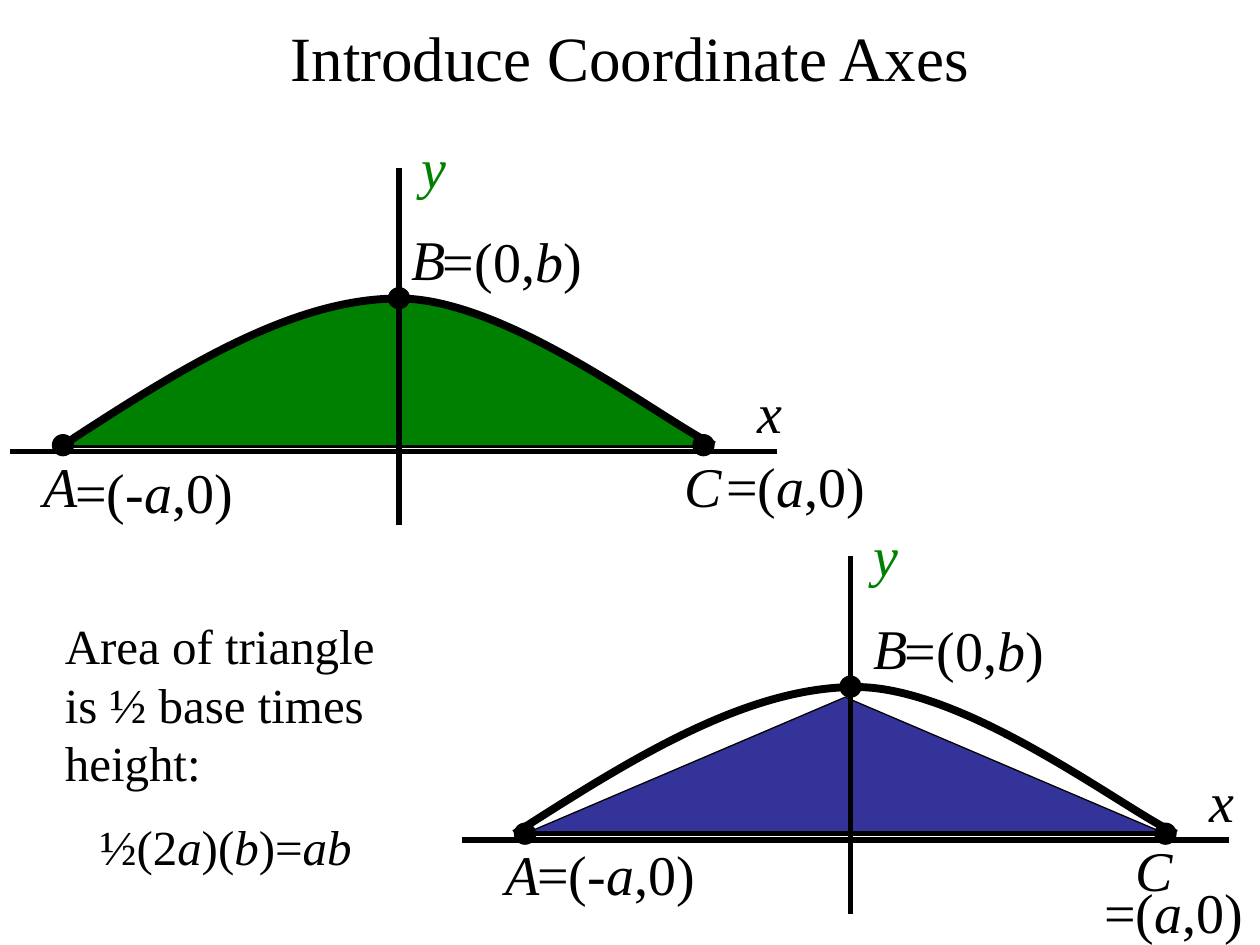
from lxml import etree
from pptx import Presentation
from pptx.dml.color import RGBColor
from pptx.enum.shapes import MSO_CONNECTOR, MSO_SHAPE
from pptx.enum.text import MSO_ANCHOR, MSO_AUTO_SIZE, PP_ALIGN
from pptx.oxml.ns import qn
from pptx.util import Pt

BLACK = RGBColor(0x00, 0x00, 0x00)
GREEN = RGBColor(0x00, 0x80, 0x00)
BLUE = RGBColor(0x33, 0x33, 0x99)
FONT = "Times New Roman"
LEFT, CENTER = PP_ALIGN.LEFT, PP_ALIGN.CENTER
TOP = MSO_ANCHOR.TOP
NO_AUTOFIT = MSO_AUTO_SIZE.NONE
STRAIGHT = MSO_CONNECTOR.STRAIGHT
TRIANGLE, OVAL = MSO_SHAPE.ISOSCELES_TRIANGLE, MSO_SHAPE.OVAL

# Start, then two cubic segments of three points each, from the left end
ARCH = [(0, 158.4), (65, 116), (130, 74.6), (192, 74.6),
        (254, 74.6), (342, 144), (372, 158.4)]
ARCH_WIDTH = 372


def write(p, text, size=32, color=BLACK, align=LEFT, before=0):
    """Fill a paragraph; the parts between asterisks are italic."""
    p.alignment = align
    p.space_before = Pt(before)
    for i, part in enumerate(text.split("*")):
        if part:
            r = p.add_run()
            r.text = part
            r.font.name, r.font.size = FONT, Pt(size)
            r.font.italic = i % 2 == 1
            r.font.bold = False
            r.font.color.rgb = color


def set_frame(tf):
    tf.word_wrap = True
    tf.auto_size = NO_AUTOFIT
    tf.vertical_anchor = TOP
    tf.margin_left = tf.margin_right = Pt(7.2)
    tf.margin_top, tf.margin_bottom = Pt(3.6), Pt(0)


def add_text(slide, x, y, w, h, text, **fmt):
    tf = slide.shapes.add_textbox(Pt(x), Pt(y), Pt(w), Pt(h)).text_frame
    set_frame(tf)
    write(tf.paragraphs[0], text, **fmt)
    return tf


def style(sp, fill, width):
    sp.shadow.inherit = False
    if fill is None:
        sp.fill.background()
    else:
        sp.fill.solid()
        sp.fill.fore_color.rgb = fill
    sp.line.color.rgb = BLACK
    sp.line.width = Pt(width)


def add_shape(slide, kind, x, y, w, h, fill):
    sp = slide.shapes.add_shape(kind, Pt(x), Pt(y), Pt(w), Pt(h))
    style(sp, fill, 0.75)


def add_line(slide, x1, y1, x2, y2):
    line = slide.shapes.add_connector(STRAIGHT, Pt(x1), Pt(y1), Pt(x2), Pt(y2))
    line.line.color.rgb = BLACK
    line.line.width = Pt(3)
    etree.SubElement(line._element.spPr, qn("a:effectLst"))


def add_arch(slide, x, y, w, fill):
    points = [(Pt(x + dx * w / ARCH_WIDTH), Pt(y + dy)) for dx, dy in ARCH]
    builder = slide.shapes.build_freeform(*points[0])
    builder.add_line_segments(points[1:], close=False)
    sp = builder.convert_to_shape()
    style(sp, fill, 4.5)
    # Turn each three straight segments into one cubic curve
    segments = list(sp._element.iter(qn("a:lnTo")))
    for i in range(0, len(segments), 3):
        curve = etree.Element(qn("a:cubicBezTo"))
        segments[i].addprevious(curve)
        for segment in segments[i:i + 3]:
            curve.append(segment[0])
            segment.getparent().remove(segment)


def add_graph(slide, x, y, shift, c_y, a_value_y, c_value, arch_fill=None,
              triangle_fill=None):
    """Draw axes, arch and labels; shift moves the base and its points."""
    bx, base_y = x + shift, y + 158.4
    base = (bx + 30, base_y, bx + 402, base_y)

    # Arch, triangle and base line
    if arch_fill is not None:
        add_line(slide, *base)
    add_arch(slide, x + 30, y, ARCH_WIDTH + shift, arch_fill)
    if triangle_fill is not None:
        add_shape(slide, TRIANGLE, bx + 30, y + 80.4, 366, 78, triangle_fill)
        add_line(slide, *base)

    # Points B, A, C
    for cx, cy in ((x + 222, y + 74.4), (bx + 30, base_y), (bx + 396, base_y)):
        add_shape(slide, OVAL, cx - 6, cy - 6, 12, 12, BLACK)

    # Axes
    add_line(slide, x + 222, y, x + 222, y + 204)
    add_line(slide, x, y + 162, x + 438, y + 162)

    # Labels
    labels = [
        (bx + 12, y + 158.4, 72, "*A*", BLACK),
        (bx + 222, y + 28.8, 72, "*B*", BLACK),
        (x + 378, y + c_y, 72, "*C*", BLACK),
        (x + 420, y + 116.4, 36, "*x*", BLACK),
        (x + 228, y - 24, 102, "*y*", GREEN),
        (bx + 240, y + 30, 126, "=(0,*b*)", BLACK),
        (bx + 30, y + a_value_y, 144, "=(-*a*,0)", BLACK),
        (x + c_value[0], y + c_value[1], 96, "=(*a*,0)", BLACK),
    ]
    for left, top, width, text, color in labels:
        add_text(slide, left, top, width, 42, text, color=color)


def add_title(slide, x, y, w, h, text):
    title = slide.shapes.title
    title.left, title.top, title.width, title.height = Pt(x), Pt(y), Pt(w), Pt(h)
    set_frame(title.text_frame)
    write(title.text_frame.paragraphs[0], text, size=36, align=CENTER)


def add_area_note(slide, x, y, w, h):
    tf = add_text(slide, x, y, w, h, "Area of triangle is ½ base times height:",
                  size=28)
    write(tf.add_paragraph(), "½(2*a*)(*b*)=*ab*", size=28, align=CENTER,
          before=14)


def main():
    prs = Presentation()
    prs.slide_width, prs.slide_height = Pt(720), Pt(540)
    slide = prs.slides.add_slide(prs.slide_layouts[5])
    add_title(slide, 42, 7.2, 636, 50.4, "Introduce Coordinate Axes")
    add_graph(slide, 6, 96, shift=0, c_y=158.4, a_value_y=162,
              c_value=(402, 158.4), arch_fill=GREEN)
    add_graph(slide, 264, 318, shift=6, c_y=156, a_value_y=158.4,
              c_value=(360, 180), triangle_fill=BLUE)
    add_area_note(slide, 30, 348, 198, 158.4)
    prs.save("out.pptx")


if __name__ == "__main__":
    main()
